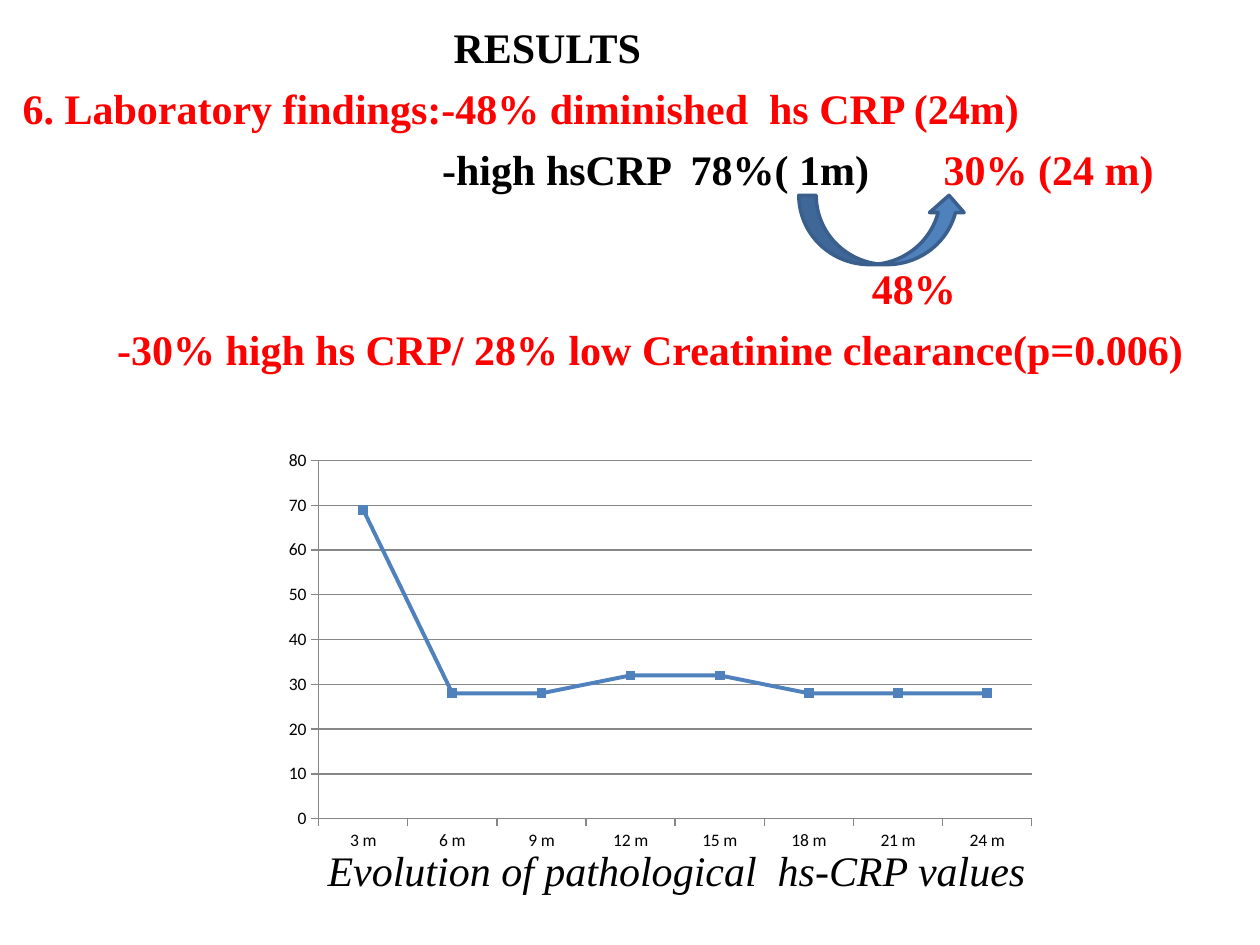
from lxml.etree import SubElement
from pptx import Presentation
from pptx.chart.data import CategoryChartData
from pptx.dml.color import RGBColor
from pptx.enum.chart import XL_CHART_TYPE as ChartType, XL_MARKER_STYLE as Marker, XL_TICK_MARK as Tick
from pptx.enum.shapes import MSO_SHAPE as Shape
from pptx.oxml.ns import qn
from pptx.util import Inches, Pt

THEME = {
    "black": RGBColor(0, 0, 0),
    "red": RGBColor(255, 0, 0),
    "blue": RGBColor.from_string("4F81BD"),
    "outline": RGBColor.from_string("3A5F8C"),
    "grid": RGBColor.from_string("868686"),
    "text_font": "Times New Roman",
    "chart_font": "Calibri",
    "text_size": Pt(24),
    "chart_size": Pt(10),
}
ROW_GAP = 6
ROW_PITCH = 33.6

FINDINGS = [
    {"row": 0, "spans": [(3.6, "RESULTS", "black")]},
    {"row": 1, "spans": [(0.18, "6. Laboratory findings:-48% diminished  hs CRP (24m)", "red")]},
    {"row": 2, "spans": [(3.51, "-high hsCRP  78%( 1m)", "black"), (7.49, "30% (24 m)", "red")]},
    {"row": 4, "spans": [(6.92, "48%", "red")]},
    {"row": 5, "spans": [(0.93, "-30% high hs CRP/ 28% low Creatinine clearance(p=0.006)", "red")]},
]
CAPTION = [{"row": 0, "spans": [(2.6, "Evolution of pathological  hs-CRP values", "black")]}]
HS_CRP = {"3 m": 69, "6 m": 28, "9 m": 28, "12 m": 32, "15 m": 32, "18 m": 28, "21 m": 28, "24 m": 28}


def add_text(page, rows, top, height, bold=False, italic=False):
    """Add a full-width box whose spans start at tab stops given in inches."""
    box = page.shapes.add_textbox(0, Inches(top), Inches(10), Inches(height))
    frame = box.text_frame
    frame.word_wrap = True
    frame.margin_left = frame.margin_right = frame.margin_top = frame.margin_bottom = 0
    previous = None
    for row in rows:
        para = frame.paragraphs[0] if previous is None else frame.add_paragraph()
        stops = SubElement(para._p.get_or_add_pPr(), qn("a:tabLst"))
        for position, text, color in row["spans"]:
            SubElement(stops, qn("a:tab"), pos=str(Inches(position)), algn="l")
            span = para.add_run()
            span.text = "\t" + text
            span.font.name = THEME["text_font"]
            span.font.size = THEME["text_size"]
            span.font.bold = bold
            span.font.italic = italic
            span.font.color.rgb = THEME[color]
        if previous is not None:
            skipped = row["row"] - previous - 1
            para.space_before = Pt(ROW_GAP + skipped * ROW_PITCH)
        previous = row["row"]


def add_arrow(page):
    """Add the curved arrow between the two hsCRP percentages."""
    arrow = page.shapes.add_shape(
        Shape.CURVED_UP_ARROW, Inches(6.34), Inches(1.55), Inches(1.33), Inches(0.55))
    arrow.shadow.inherit = False
    arrow.fill.solid()
    arrow.fill.fore_color.rgb = THEME["blue"]
    arrow.line.color.rgb = THEME["outline"]
    arrow.line.width = Pt(2)


def add_line_chart(page):
    """Add the line chart of pathological hs-CRP values."""
    data = CategoryChartData()
    data.categories = list(HS_CRP)
    data.add_series("Series 1", list(HS_CRP.values()))
    chart = page.shapes.add_chart(
        ChartType.LINE_MARKERS, Inches(2.17), Inches(3.51), Inches(6.14), Inches(3.31), data).chart
    chart.has_legend = False
    chart.has_title = False
    chart.font.name = THEME["chart_font"]
    chart.font.size = THEME["chart_size"]
    chart.font.color.rgb = THEME["black"]
    values = chart.value_axis
    values.minimum_scale, values.maximum_scale, values.major_unit = 0, 80, 10
    values.has_major_gridlines = True
    for axis in (chart.category_axis, values):
        axis.major_tick_mark = Tick.OUTSIDE
        axis.format.line.color.rgb = THEME["grid"]
    values.major_gridlines.format.line.color.rgb = THEME["grid"]
    plot = chart.plots[0]
    plot.vary_by_categories = False
    series = plot.series[0]
    series.smooth = False
    series.format.line.color.rgb = THEME["blue"]
    series.format.line.width = Pt(2.25)
    series.marker.style = Marker.SQUARE
    series.marker.size = 5
    series.marker.format.fill.solid()
    series.marker.format.fill.fore_color.rgb = THEME["blue"]
    series.marker.format.line.color.rgb = THEME["blue"]


def main():
    """Build the results slide and save it."""
    deck = Presentation()
    deck.slide_width, deck.slide_height = Inches(10), Inches(7.5)
    page = deck.slides.add_slide(deck.slide_layouts[6])
    add_text(page, FINDINGS, top=0.17, height=2.8, bold=True)
    add_text(page, CAPTION, top=6.7, height=0.4, italic=True)
    add_arrow(page)
    add_line_chart(page)
    deck.save("out.pptx")


if __name__ == "__main__":
    main()
